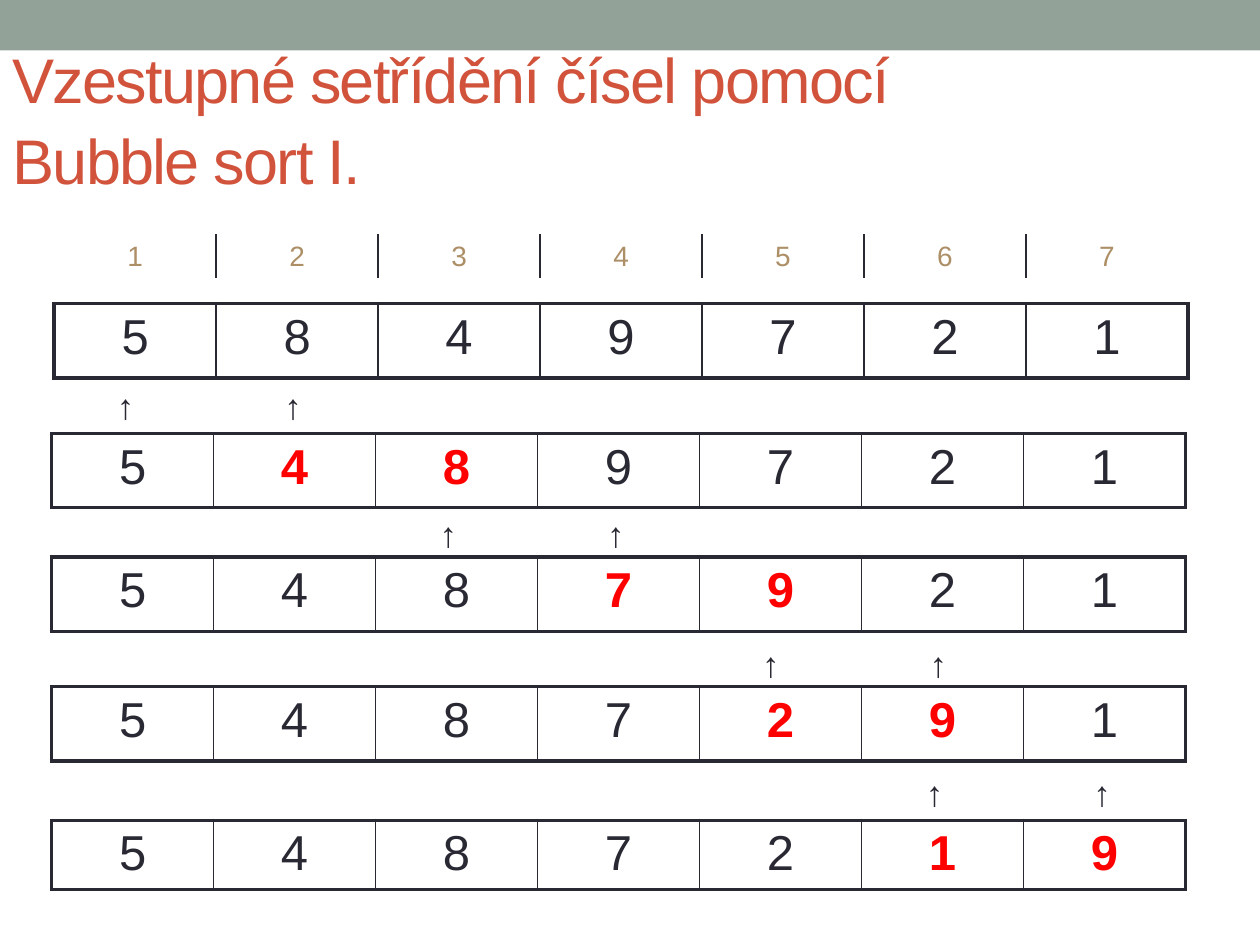
from dataclasses import dataclass

from lxml.etree import SubElement
from pptx import Presentation
from pptx.dml.color import RGBColor
from pptx.enum.shapes import MSO_SHAPE as Shape
from pptx.enum.text import MSO_ANCHOR as Anchor, MSO_AUTO_SIZE as AutoSize, PP_ALIGN as Align
from pptx.oxml.ns import qn
from pptx.util import Inches, Pt

INK, RED, TAN, TITLE_RED, SAGE = "292934", "FF0000", "AD8F67", "D2533C", "93A299"
TABLE_WIDTH = 9
ARROW_GAP = 1.33
THIN, THICK = 1, 2.25


@dataclass
class Step:
    """One state of the array; swapped holds the columns just exchanged."""
    digits: str
    left: float
    top: float
    height: float = 0.59
    swapped: tuple[int, ...] = ()


@dataclass
class ArrowPair:
    """Two arrows under the neighbours being compared."""
    left: float
    top: float


STEPS = [
    Step("5849721", 0.43, 2.41),
    Step("5489721", 0.41, 3.44, swapped=(1, 2)),
    Step("5487921", 0.41, 4.42, swapped=(3, 4)),
    Step("5487291", 0.41, 5.45, swapped=(4, 5)),
    Step("5487219", 0.41, 6.51, height=0.55, swapped=(5, 6)),
]
COMPARISONS = [
    ArrowPair(0.83, 3), ArrowPair(3.39, 4.02),
    ArrowPair(5.95, 5.05), ArrowPair(7.25, 6.07),
]


def rgb(color: str) -> RGBColor:
    return RGBColor.from_string(color)


def write(frame, text: str, *, size: float, color: str = INK, bold: bool = False,
          align=Align.LEFT, spacing: float = 0, line_spacing: float = 1) -> None:
    frame.text = text
    for paragraph in frame.paragraphs:
        paragraph.alignment = align
        paragraph.line_spacing = line_spacing
        for run in paragraph.runs:
            font = run.font
            font.name, font.size, font.bold = "Arial", Pt(size), bold
            font.color.rgb = rgb(color)
            if spacing:
                font._element.set("spc", str(round(spacing * 100)))


def set_borders(cell, **widths: float) -> None:
    """Draw the L, R, T and B borders; a width of 0 hides one."""
    properties = cell._tc.get_or_add_tcPr()
    for side in "LRTB":
        width = widths[side]
        line = SubElement(properties, qn(f"a:ln{side}"), w=str(Pt(width)))
        if width:
            fill = SubElement(line, qn("a:solidFill"))
            SubElement(fill, qn("a:srgbClr"), val=INK)
        else:
            SubElement(line, qn("a:noFill"))


def draw_row(slide, step: Step, *, size: float, color: str = INK,
             outline: float = THICK, anchor=Anchor.TOP) -> None:
    count = len(step.digits)
    table = slide.shapes.add_table(
        1, count, Inches(step.left), Inches(step.top),
        Inches(TABLE_WIDTH), Inches(step.height)).table
    table.first_row = table.horz_banding = False
    for column, digit in enumerate(step.digits):
        cell = table.cell(0, column)
        swapped = column in step.swapped
        write(cell.text_frame, digit, size=size, color=RED if swapped else color,
              bold=swapped, align=Align.CENTER)
        cell.vertical_anchor = anchor
        set_borders(cell, L=THIN if column else outline,
                    R=THIN if column < count - 1 else outline,
                    T=outline, B=outline)
        cell.fill.background()


def draw_arrows(slide, pair: ArrowPair) -> None:
    for index in range(2):
        arrow = slide.shapes.add_textbox(
            Inches(pair.left + index * ARROW_GAP), Inches(pair.top),
            Inches(0.47), Inches(0.43))
        arrow.text_frame.word_wrap = True
        write(arrow.text_frame, "↑", size=20, bold=True)


def main() -> None:
    deck = Presentation()
    deck.slide_width, deck.slide_height = Inches(10), Inches(7.5)
    slide = deck.slides.add_slide(deck.slide_layouts[5])

    # Top band
    band = slide.shapes.add_shape(Shape.RECTANGLE, 0, 0, Inches(10), Inches(0.4))
    band.shadow.inherit = False
    band.fill.solid()
    band.fill.fore_color.rgb = rgb(SAGE)
    band.line.fill.background()

    # Title
    title = slide.shapes.title
    title.left, title.top = Inches(0), Inches(0.3)
    title.width, title.height = Inches(9.61), Inches(1.25)
    title.text_frame.auto_size = AutoSize.NONE
    title.text_frame.vertical_anchor = Anchor.MIDDLE
    write(title.text_frame, "Vzestupné setřídění čísel pomocí \vBubble sort I.",
          size=36, color=TITLE_RED, spacing=-1, line_spacing=1.07)

    # Column numbers, array states and comparison arrows
    draw_row(slide, Step("1234567", 0.43, 1.86, 0.35), size=16, color=TAN,
             outline=0, anchor=Anchor.BOTTOM)
    for step in STEPS:
        draw_row(slide, step, size=28)
    for pair in COMPARISONS:
        draw_arrows(slide, pair)

    deck.save("out.pptx")


if __name__ == "__main__":
    main()
